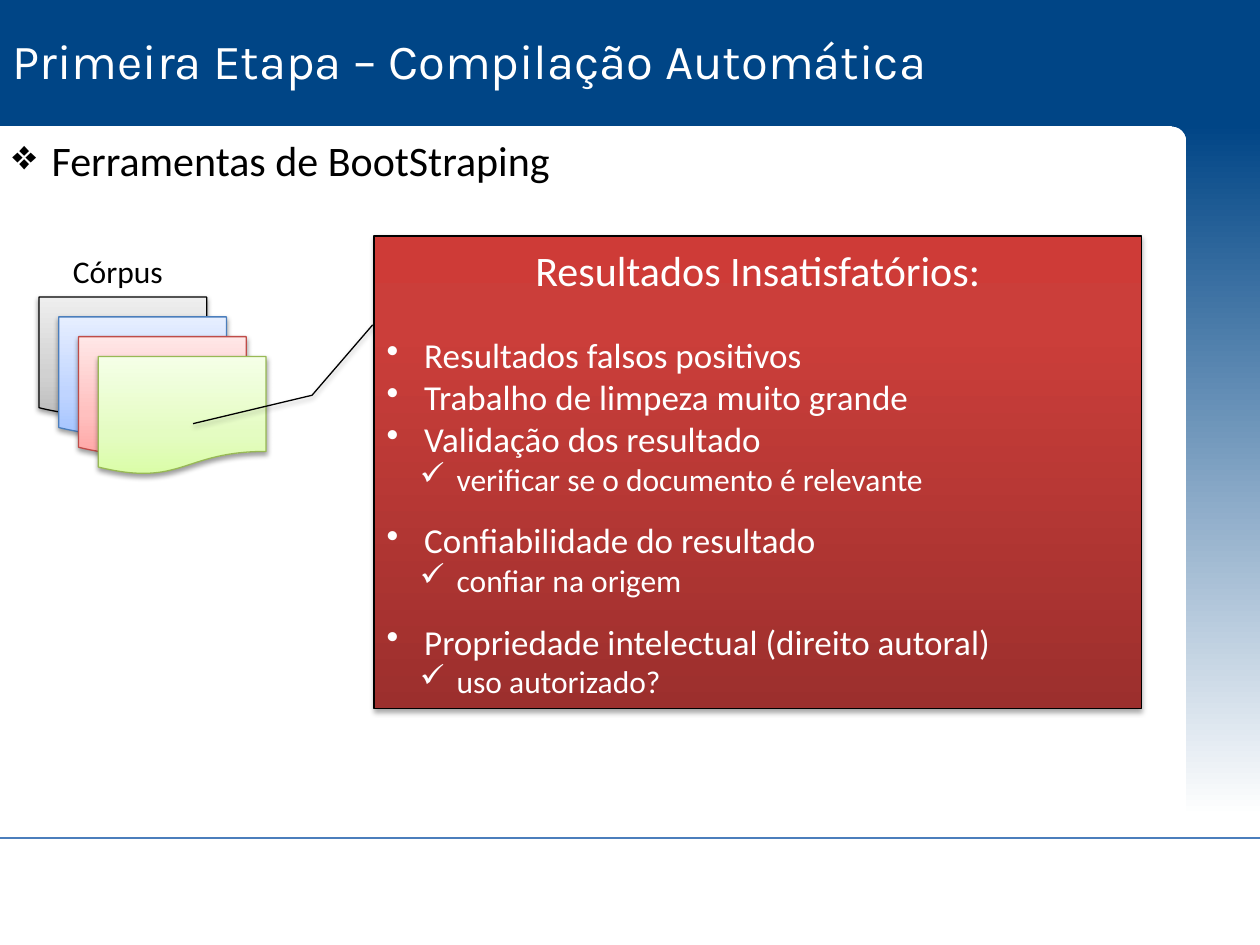
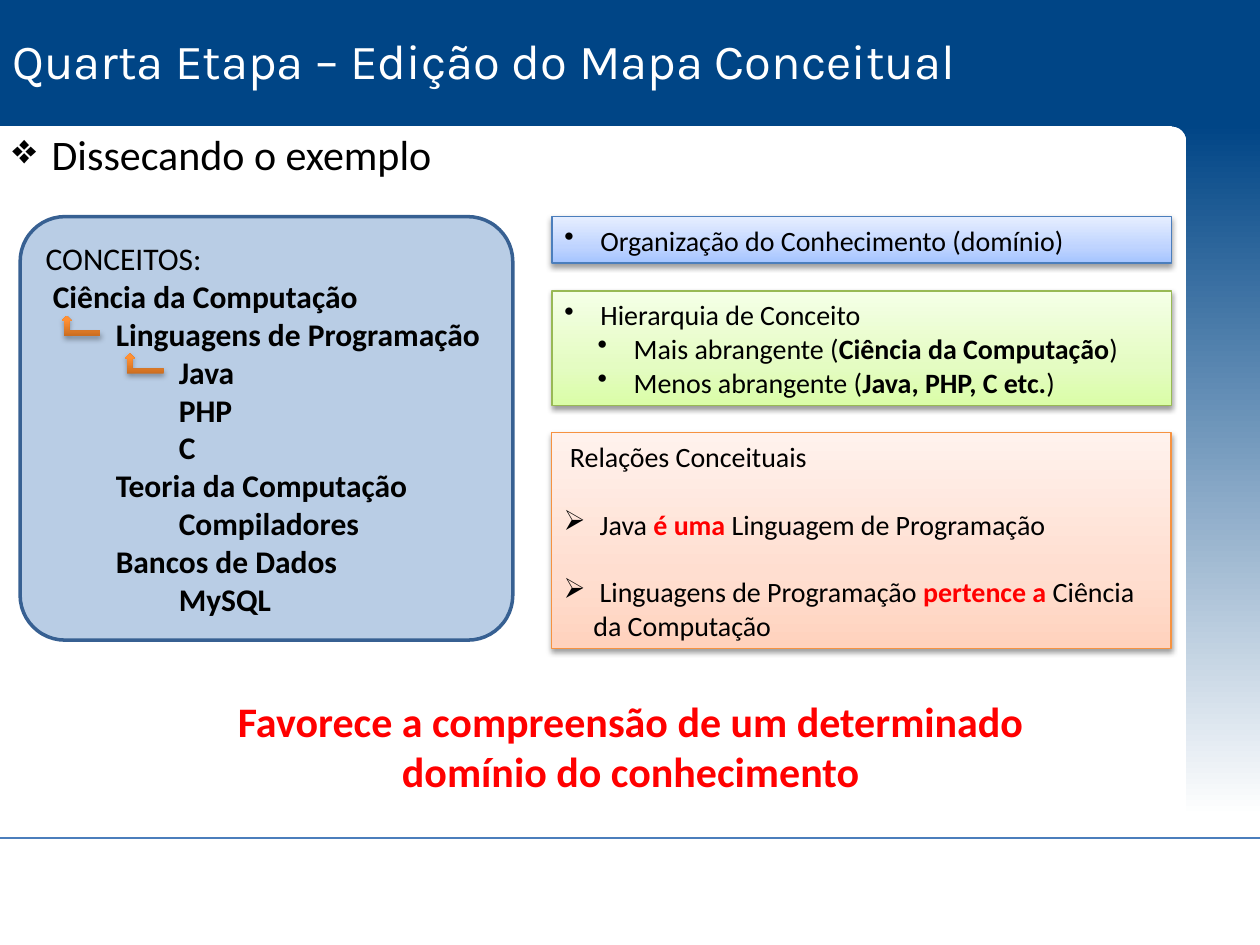
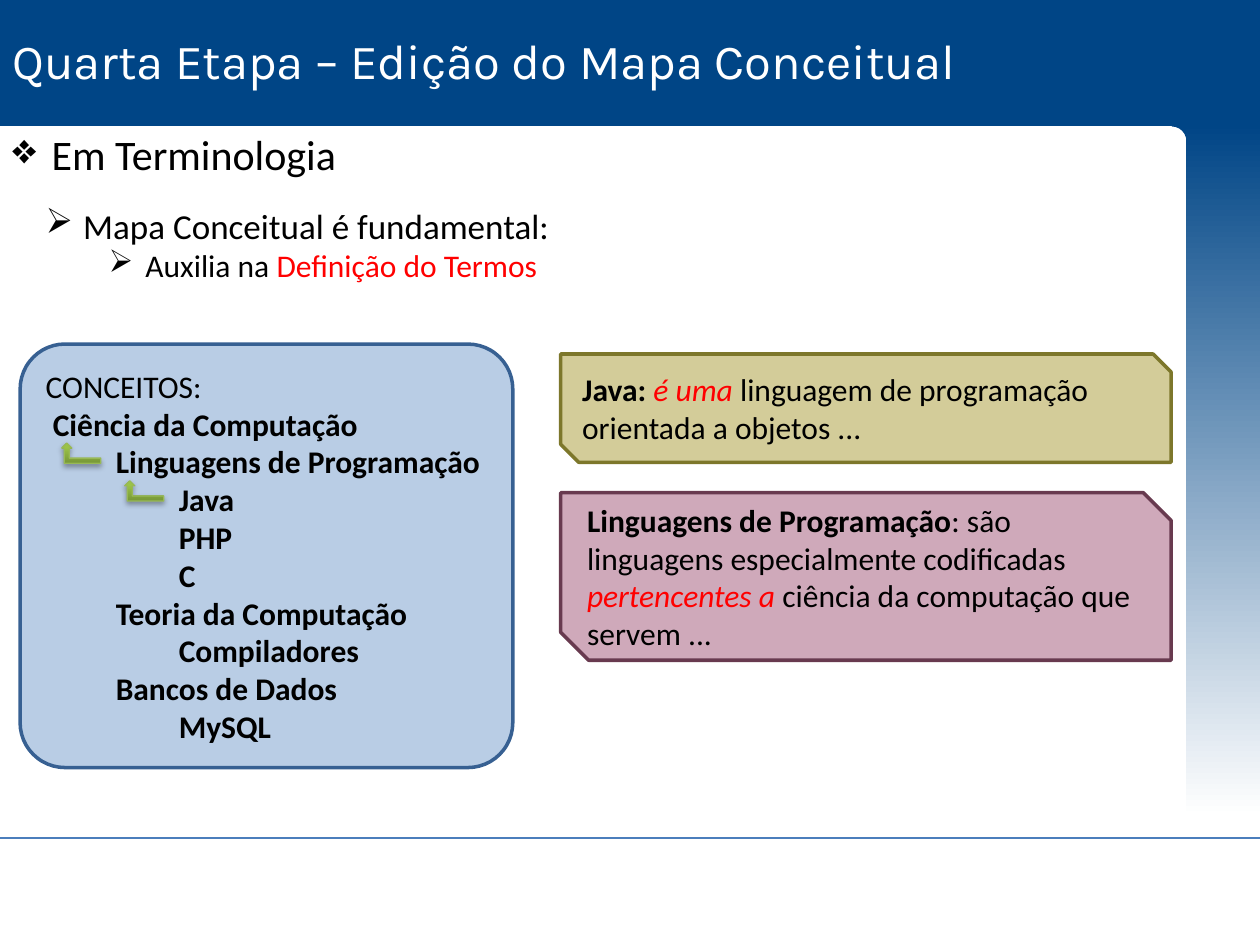
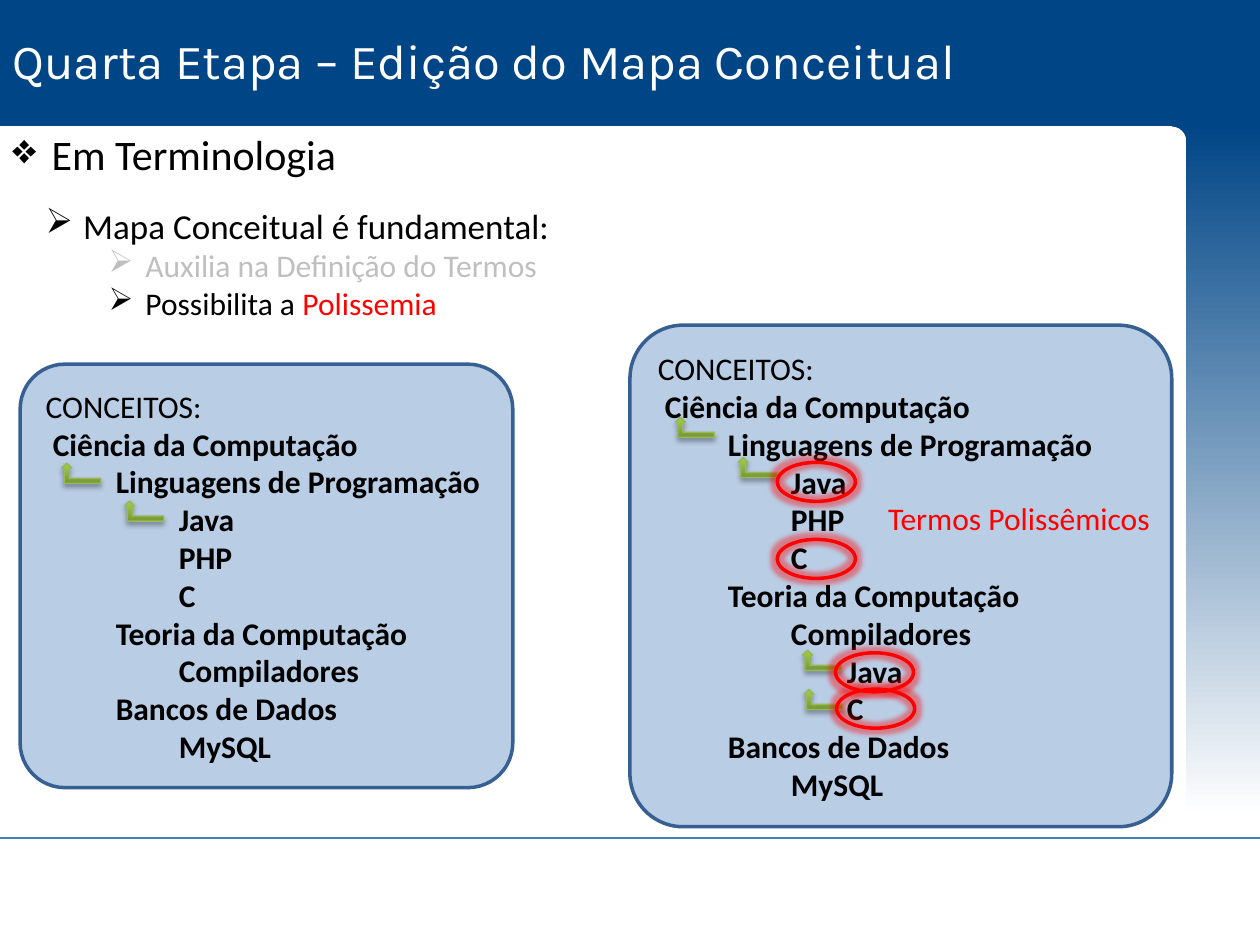
from lxml.etree import SubElement
from pptx import Presentation
from pptx.dml.color import RGBColor
from pptx.enum.shapes import MSO_CONNECTOR, MSO_SHAPE
from pptx.enum.text import MSO_ANCHOR, PP_ALIGN
from pptx.oxml.ns import qn
from pptx.util import Pt

NAVY = RGBColor(0x00, 0x45, 0x86)
WHITE = RGBColor(0xFF, 0xFF, 0xFF)
BLACK = RGBColor(0x00, 0x00, 0x00)
RED = RGBColor(0xFF, 0x00, 0x00)
SILVER = RGBColor(0xBF, 0xBF, 0xBF)
BLUE_LINE = RGBColor(0x4B, 0x7E, 0xBC)
RED_LINE = RGBColor(0xBF, 0x4C, 0x48)
GREEN_LINE = RGBColor(0x98, 0xB9, 0x55)
ORANGE_LINE = RGBColor(0xF6, 0x92, 0x40)
PANEL_FILL = RGBColor(0xB9, 0xCD, 0xE5)
PANEL_LINE = RGBColor(0x37, 0x60, 0x92)
OLIVE_FILL = RGBColor(0xD3, 0xCC, 0x99)
OLIVE_LINE = RGBColor(0x7D, 0x77, 0x2B)
MAUVE_FILL = RGBColor(0xCF, 0xA9, 0xBA)
MAUVE_LINE = RGBColor(0x68, 0x3A, 0x4F)

SIDEBAR_FADE = ((0, WHITE), (100, NAVY))
GRAY_FADE = ((0, RGBColor(0xBD, 0xBD, 0xBD)), (35, RGBColor(0xD1, 0xD1, 0xD1)), (100, RGBColor(0xEE, 0xEE, 0xEE)))
BLUE_FADE = ((0, RGBColor(0xA4, 0xC4, 0xFF)), (35, RGBColor(0xBF, 0xD4, 0xFF)), (100, RGBColor(0xE6, 0xEE, 0xFF)))
PINK_FADE = ((0, RGBColor(0xFF, 0xA6, 0xA5)), (35, RGBColor(0xFF, 0xC0, 0xBF)), (100, RGBColor(0xFF, 0xE7, 0xE7)))
LIME_FADE = ((0, RGBColor(0xDA, 0xFD, 0xA7)), (35, RGBColor(0xE4, 0xFC, 0xC2)), (100, RGBColor(0xF5, 0xFF, 0xE7)))
PEACH_FADE = ((0, RGBColor(0xFF, 0xD2, 0xBD)), (35, RGBColor(0xFF, 0xDE, 0xD0)), (100, RGBColor(0xFF, 0xF2, 0xED)))
CRIMSON_FADE = ((0, RGBColor(0x9C, 0x2F, 0x2D)), (80, RGBColor(0xCB, 0x3E, 0x3A)), (100, RGBColor(0xCE, 0x3B, 0x37)))
ORANGE_FADE = ((0, RGBColor(0xCC, 0x6E, 0x20)), (80, RGBColor(0xFF, 0x90, 0x34)), (100, RGBColor(0xFF, 0x91, 0x36)))
GREEN_FADE = ((0, RGBColor(0x77, 0x97, 0x37)), (80, RGBColor(0x9B, 0xC3, 0x48)), (100, RGBColor(0x9D, 0xC7, 0x46)))

BODY_FONT = "Calibri"
TITLE_FONT = "Karla"
HANGING = 17
LEVEL_STEP = 36
STYLE_COLOURS = {"r": RED, "w": WHITE, "g": SILVER}


def add_box(page, kind, place, fill=None, line=None, weight=0.75, shadow=0):
    box = page.shapes.add_shape(kind, *[Pt(length) for length in place])
    box.shadow.inherit = False
    if fill is None:
        box.fill.background()
    elif isinstance(fill, RGBColor):
        box.fill.solid()
        box.fill.fore_color.rgb = fill
    else:
        box.fill.gradient()
        box.fill.gradient_angle = 90
        stops = box._element.spPr.find(qn("a:gradFill")).find(qn("a:gsLst"))
        for stop in list(stops):
            stops.remove(stop)
        for position, colour in fill:
            stop = SubElement(stops, qn("a:gs"), pos=str(position * 1000))
            SubElement(stop, qn("a:srgbClr"), val=str(colour))
    if line is None:
        box.line.fill.background()
    else:
        box.line.color.rgb = line
        box.line.width = Pt(weight)
    if shadow:
        effects = box._element.spPr.find(qn("a:effectLst"))
        outer = SubElement(effects, qn("a:outerShdw"), blurRad=str(Pt(3.1)), dist=str(Pt(1.7)),
                           dir="5400000", rotWithShape="0")
        tint = SubElement(outer, qn("a:srgbClr"), val=str(BLACK))
        SubElement(tint, qn("a:alpha"), val=str(shadow * 1000))
    return box


def write_text(box, rows, align=PP_ALIGN.LEFT, font=BODY_FONT):
    frame = box.text_frame
    frame.word_wrap = True
    for number, (level, bullet, size, gap, spans) in enumerate(rows):
        para = frame.paragraphs[0] if number == 0 else frame.add_paragraph()
        para.alignment = align
        para.level = level
        if gap:
            para.space_before = Pt(gap)
        properties = para._p.get_or_add_pPr()
        margin = level * LEVEL_STEP or (HANGING if bullet else 0)
        properties.set("marL", str(Pt(margin)))
        properties.set("indent", str(Pt(-HANGING if bullet else 0)))
        if bullet:
            SubElement(properties, qn("a:buChar"), char=bullet)
        else:
            SubElement(properties, qn("a:buNone"))
        for text, style in spans:
            span = para.add_run()
            span.text = text
            span.font.name = font
            span.font.size = Pt(size)
            span.font.bold = "b" in style
            span.font.italic = "i" in style
            colours = [STYLE_COLOURS[mark] for mark in style if mark in STYLE_COLOURS]
            span.font.color.rgb = colours[0] if colours else BLACK
    return frame


deck = Presentation()
deck.slide_width = Pt(720)
deck.slide_height = Pt(540)

fourth_stage = "Quarta Etapa – Edição do Mapa Conceitual"
terminology = (0, "❖", 24, 0, [(" Em Terminologia", "")])
concept_map = (1, "➢", 20, 14.6, [(" Mapa Conceitual é fundamental:", "")])
headings = [
    ("Primeira Etapa – Compilação Automática", 73.4,
     [(0, "❖", 24, 0, [(" Ferramentas de BootStraping", "")])]),
    (fourth_stage, 69.8, [(0, "❖", 24, 0, [(" Dissecando o exemplo", "")])]),
    (fourth_stage, 69.8, [
        terminology, concept_map,
        (2, "➢", 18, 0, [(" Auxilia na ", ""), ("Definição do Termos", "r")])]),
    (fourth_stage, 69.8, [
        terminology, concept_map,
        (2, "➢", 18, 0, [(" Auxilia na Definição do Termos", "g")]),
        (2, "➢", 18, 0, [(" Possibilita a ", ""), ("Polissemia", "r")])]),
]

pages = []
for title, heading_top, heading_rows in headings:
    page = deck.slides.add_slide(deck.slide_layouts[6])
    pages.append(page)
    rule = page.shapes.add_connector(MSO_CONNECTOR.STRAIGHT, 0, Pt(478.8), Pt(720), Pt(478.8))
    rule.line.color.rgb = BLUE_LINE
    rule.line.width = Pt(0.75)
    SubElement(rule._element.spPr, qn("a:effectLst"))
    add_box(page, MSO_SHAPE.RECTANGLE, (0, 0, 720, 72), NAVY)
    add_box(page, MSO_SHAPE.PLAQUE, (669.6, 20.2, 50.4, 60.5), NAVY)
    add_box(page, MSO_SHAPE.RECTANGLE, (677.5, 70.6, 42.5, 396), SIDEBAR_FADE)
    title_box = page.shapes.add_textbox(0, Pt(16.6), Pt(720), Pt(45.4))
    title_frame = write_text(title_box, [(0, "", 28, 0, [(title, "w")])], font=TITLE_FONT)
    title_frame.paragraphs[0].line_spacing = 0.95
    heading_box = page.shapes.add_textbox(0, Pt(heading_top), Pt(669.6), Pt(36.4))
    write_text(heading_box, heading_rows)

bootstrap_page, example_page, definition_page, polysemy_page = pages

sheets = [(GRAY_FADE, BLACK), (BLUE_FADE, BLUE_LINE), (PINK_FADE, RED_LINE), (LIME_FADE, GREEN_LINE)]
for number, (fade, outline) in enumerate(sheets):
    offset = 11.3 * number
    add_box(bootstrap_page, MSO_SHAPE.FLOWCHART_DOCUMENT, (22.3 + offset, 169.8 + offset, 95.8, 67.7),
            fade, outline, shadow=38)
corpus_label = bootstrap_page.shapes.add_textbox(Pt(34.6), Pt(140.4), Pt(77.8), Pt(28.8))
write_text(corpus_label, [(0, "", 18, 0, [("Córpus", "")])])

callout = add_box(bootstrap_page, MSO_SHAPE.LINE_CALLOUT_2, (213.8, 134.9, 438.5, 270),
                  CRIMSON_FADE, BLACK, shadow=35)
for number, ratio in enumerate((0.188, -0.002, 0.337, -0.081, 0.397, -0.236)):
    callout.adjustments[number] = ratio
callout_frame = write_text(callout, [
    (0, "", 24, 0, [("Resultados Insatisfatórios:", "w")]),
    (0, "•", 20, 22, [(" Resultados falsos positivos", "w")]),
    (0, "•", 20, 0, [(" Trabalho de limpeza muito grande", "w")]),
    (0, "•", 20, 0, [(" Validação dos resultado", "w")]),
    (1, "✓", 18, 0, [(" verificar se o documento é relevante", "w")]),
    (0, "•", 20, 12.2, [(" Confiabilidade do resultado", "w")]),
    (1, "✓", 18, 0, [(" confiar na origem", "w")]),
    (0, "•", 20, 12.2, [(" Propriedade intelectual (direito autoral)", "w")]),
    (1, "✓", 18, 0, [(" uso autorizado?", "w")]),
])
callout_frame.paragraphs[0].alignment = PP_ALIGN.CENTER

concepts = [
    (0, "CONCEITOS:"), (0, " Ciência da Computação"), (1, " Linguagens de Programação"),
    (2, " Java"), (2, " PHP"), (2, " C"), (1, " Teoria da Computação"), (2, " Compiladores"),
    (1, " Bancos de Dados"), (2, " MySQL"),
]
polysemic_concepts = concepts[:8] + [(3, "Java"), (3, "C")] + concepts[8:]
arrow_offsets = [(23.8, 56.6), (59.8, 78.2)]
polysemic_offsets = [(25.9, 52.6), (61.9, 75.6), (98.6, 185.8), (99.4, 208.1)]
panels = [
    (example_page, (11.5, 123.8, 281.5, 242), concepts, arrow_offsets, ORANGE_FADE, None),
    (definition_page, (11.5, 196.6, 281.5, 242), concepts, arrow_offsets, GREEN_FADE, GREEN_LINE),
    (polysemy_page, (11.5, 208.1, 281.5, 242), concepts, arrow_offsets, GREEN_FADE, GREEN_LINE),
    (polysemy_page, (360, 185.8, 309.6, 286.6), polysemic_concepts, polysemic_offsets, GREEN_FADE, GREEN_LINE),
]
for page, place, entries, offsets, fade, outline in panels:
    panel = add_box(page, MSO_SHAPE.ROUNDED_RECTANGLE, place, PANEL_FILL, PANEL_LINE, 2)
    panel.adjustments[0] = 0.106
    write_text(panel, [(level, "", 18, 0, [(text, "b" if number else "")])
                       for number, (level, text) in enumerate(entries)])
    for across, down in offsets:
        arrow = add_box(page, MSO_SHAPE.BENT_UP_ARROW, (place[0] + across, place[1] + down, 22.3, 11.5),
                        fade, outline, shadow=35)
        arrow._element.spPr.xfrm.set("flipH", "1")

notes = [
    (example_page, MSO_SHAPE.RECTANGLE, (315.4, 123.8, 354.2, 26.6), BLUE_FADE, BLUE_LINE, 0.75, 38, [
        (0, "•", 16, 0, [(" Organização do Conhecimento (domínio)", "")])]),
    (example_page, MSO_SHAPE.RECTANGLE, (315.4, 166.3, 354.2, 65.5), LIME_FADE, GREEN_LINE, 0.75, 38, [
        (0, "•", 16, 0, [(" Hierarquia de Conceito", "")]),
        (1, "•", 16, 0, [(" Mais abrangente (", ""), ("Ciência da Computação", "b"), (")", "")]),
        (1, "•", 16, 0, [(" Menos abrangente (", ""), ("Java, PHP, C etc.", "b"), (")", "")])]),
    (example_page, MSO_SHAPE.RECTANGLE, (315, 247, 354.2, 123.8), PEACH_FADE, ORANGE_LINE, 0.75, 38, [
        (0, "", 16, 0, [(" Relações Conceituais", "")]),
        (0, "➢", 16, 19.5, [(" Java ", ""), ("é uma", "rb"), (" Linguagem de Programação", "")]),
        (0, "➢", 16, 19.5, [(" Linguagens de Programação ", ""), ("pertence a", "rb"),
                            (" Ciência da Computação", "")])]),
    (definition_page, MSO_SHAPE.SNIP_2_DIAG_RECTANGLE, (320.4, 202.3, 348.8, 61.9), OLIVE_FILL, OLIVE_LINE, 2, 0, [
        (0, "", 18, 0, [("Java: ", "b"), ("é uma ", "ri"),
                        ("linguagem de programação orientada a objetos ...", "")])]),
    (definition_page, MSO_SHAPE.SNIP_2_DIAG_RECTANGLE, (320.4, 281.5, 348.8, 95.8), MAUVE_FILL, MAUVE_LINE, 2, 0, [
        (0, "", 18, 0, [("Linguagens de Programação", "b"),
                        (": são linguagens especialmente codificadas ", ""),
                        ("pertencentes a ", "ri"), ("ciência da computação que servem ...", "")])]),
]
for page, kind, place, fill, outline, weight, shadow, rows in notes:
    note = add_box(page, kind, place, fill, outline, weight, shadow)
    note.text_frame.vertical_anchor = MSO_ANCHOR.MIDDLE
    write_text(note, rows)

benefit = example_page.shapes.add_textbox(Pt(101.5), Pt(393.8), Pt(517.7), Pt(65.5))
write_text(benefit, [(0, "", 24, 0, [
    ("Favorece a compreensão de um determinado domínio do conhecimento", "rb")])], PP_ALIGN.CENTER)

for left, top in ((444.2, 264.2), (444.2, 308.2), (477.4, 373), (478.1, 393.8)):
    ring = add_box(polysemy_page, MSO_SHAPE.OVAL, (left, top, 44.6, 22.3), None, RED, 2)
    glow = SubElement(ring._element.spPr.find(qn("a:effectLst")), qn("a:glow"), rad=str(Pt(5)))
    tint = SubElement(glow, qn("a:srgbClr"), val=str(RED))
    SubElement(tint, qn("a:alpha"), val="40000")
polysemic_label = polysemy_page.shapes.add_textbox(Pt(500.4), Pt(281.5), Pt(168.5), Pt(28.8))
write_text(polysemic_label, [(0, "", 18, 0, [("Termos Polissêmicos", "r")])])

deck.save("out.pptx")
